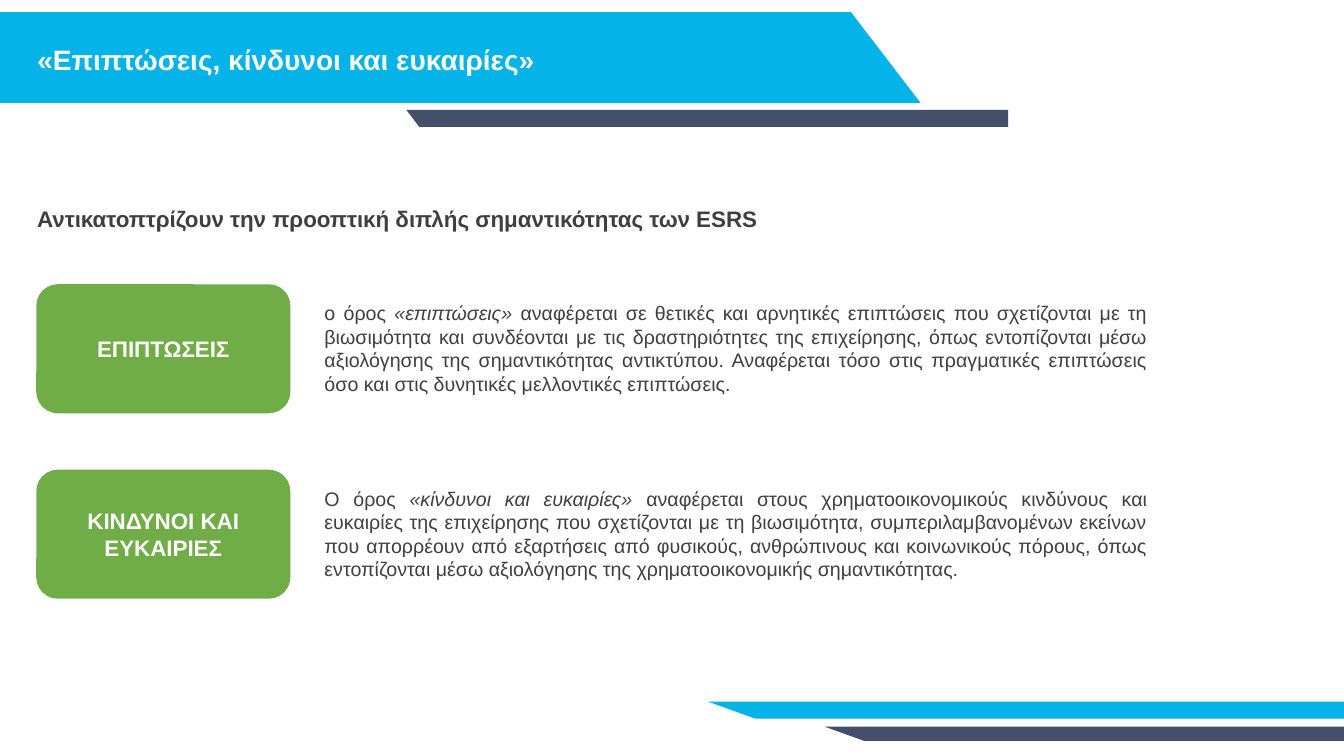
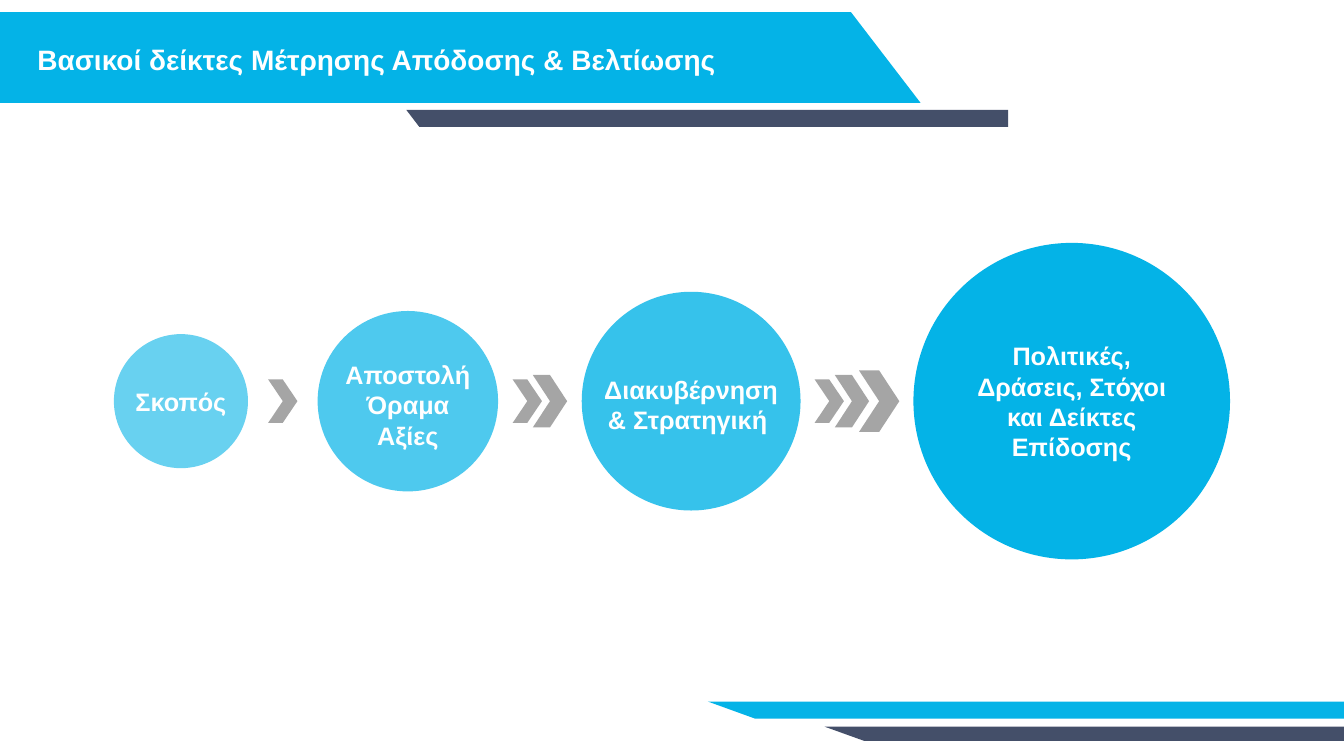
from dataclasses import dataclass
from pptx import Presentation
from pptx.dml.color import RGBColor
from pptx.enum.shapes import MSO_SHAPE
from pptx.enum.text import MSO_ANCHOR, PP_ALIGN
from pptx.oxml.ns import qn
from pptx.util import Inches, Pt
from lxml.etree import SubElement


@dataclass(frozen=True)
class Theme:
    font: str = "Arial"
    blue: str = "04B3E7"
    navy: str = "444F69"
    green: str = "70AD47"
    grey: str = "808080"
    ink: str = "3F3F3F"
    white: str = "FFFFFF"
    title: int = 20
    stage: int = 18
    label: int = 16
    body: int = 14


T = Theme()
W, H = 13.33, 7.5
TITLE_BOX = (0.27, 0.23, 7.85, 0.72)
INSETS = (0.1, 0.05, 0.1, 0.05)

# Outlines of the shared bands: colour and corner points
BANDS = [
    (T.blue, [(0, 0.12), (8.44, 0.12), (9.13, 1.02), (0, 1.02)]),
    (T.navy, [(4.03, 1.09), (10, 1.09), (10, 1.26), (4.16, 1.26)]),
    (T.blue, [(7.02, 6.96), (W, 6.96), (W, 7.13), (7.49, 7.13)]),
    (T.navy, [(8.18, 7.21), (W, 7.21), (W, 7.35), (8.57, 7.35)]),
]

# Each term: label, then runs of (text, italic)
TERMS = [
    ("ΕΠΙΠΤΩΣΕΙΣ", [
        ("ο όρος ", False), ("«επιπτώσεις» ", True),
        ("αναφέρεται σε θετικές και αρνητικές επιπτώσεις που σχετίζονται με τη "
         "βιωσιμότητα και συνδέονται με τις δραστηριότητες της επιχείρησης, όπως "
         "εντοπίζονται μέσω αξιολόγησης της σημαντικότητας αντικτύπου. Αναφέρεται "
         "τόσο στις πραγματικές επιπτώσεις όσο και στις δυνητικές μελλοντικές "
         "επιπτώσεις.", False)]),
    ("ΚΙΝΔΥΝΟΙ ΚΑΙ ΕΥΚΑΙΡΙΕΣ", [
        ("Ο όρος ", False), ("«κίνδυνοι και ευκαιρίες» ", True),
        ("αναφέρεται στους χρηματοοικονομικούς κινδύνους και ευκαιρίες της "
         "επιχείρησης που σχετίζονται με τη βιωσιμότητα, συμπεριλαμβανομένων "
         "εκείνων που απορρέουν από εξαρτήσεις από φυσικούς, ανθρώπινους και "
         "κοινωνικούς πόρους, όπως εντοπίζονται μέσω αξιολόγησης της "
         "χρηματοοικονομικής σημαντικότητας.", False)]),
]

# Each stage: left offset, diameter, opacity %, top inset, wrap, paragraphs
STAGES = [
    (0, 1.33, 60, 0.05, True, ["Σκοπός"]),
    (2.02, 1.79, 70, 0.12, True, ["Αποστολή Όραμα", "Αξίες"]),
    (4.64, 2.17, 80, 0.12, False, ["Διακυβέρνηση", "& Στρατηγική "]),
    (7.93, 3.14, 100, 0.05, True, ["Πολιτικές, Δράσεις, Στόχοι και Δείκτες Επίδοσης"]),
]
# Each chevron: offset in its group, width, height
CHEVRONS = [(0, 0.29, 0.43), (0.2, 0.34, 0.52), (0.44, 0.4, 0.61)]


def place(sp, box):
    for name, value in zip(("left", "top", "width", "height"), box):
        setattr(sp, name, Inches(value))


def paint(sp, color, opacity=100):
    sp.shadow.inherit = False
    sp.fill.solid()
    sp.fill.fore_color.rgb = RGBColor.from_string(color)
    sp.line.fill.background()
    if opacity < 100:
        rgb = sp.element.spPr.find(qn("a:solidFill"))[0]
        SubElement(rgb, qn("a:alpha")).set("val", str(opacity * 1000))


def write(sp, paragraphs, size, color, bold=True, align=PP_ALIGN.LEFT,
          anchor=MSO_ANCHOR.MIDDLE, insets=INSETS, wrap=True, indent=0):
    """Fill a shape with paragraphs, each a list of (text, italic) runs."""
    tf = sp.text_frame
    frame = dict(zip(("margin_left", "margin_top", "margin_right", "margin_bottom"),
                     map(Inches, insets)), vertical_anchor=anchor, word_wrap=wrap)
    for name, value in frame.items():
        setattr(tf, name, value)
    for i, runs in enumerate(paragraphs):
        p = tf.add_paragraph() if i else tf.paragraphs[0]
        p.alignment = align
        if indent:
            p._p.get_or_add_pPr().set("marL", str(Inches(indent)))
        for text, italic in runs:
            r = p.add_run()
            r.text = text
            fmt = {"name": T.font, "size": Pt(size), "bold": bold, "italic": italic}
            for name, value in fmt.items():
                setattr(r.font, name, value)
            r.font.color.rgb = RGBColor.from_string(color)


def add_shape(s, kind, box, color, opacity=100):
    sp = s.shapes.add_shape(kind, *map(Inches, box))
    paint(sp, color, opacity)
    return sp


def add_text(s, box, runs, size, **style):
    sp = s.shapes.add_textbox(*map(Inches, box))
    write(sp, [runs], size, T.ink, **style)


def add_slide(prs, title):
    s = prs.slides.add_slide(prs.slide_layouts[5])
    write(s.shapes.title, [[(title, False)]], T.title, T.white)
    return s


def set_master(prs, s):
    """Draw the bands with slide s and move them behind the master's placeholders."""
    tree = prs.slide_master.shapes.element
    for i, (color, points) in enumerate(BANDS):
        corners = [(Inches(x), Inches(y)) for x, y in points]
        builder = s.shapes.build_freeform(*corners[0])
        builder.add_line_segments(corners[1:], close=True)
        sp = builder.convert_to_shape()
        paint(sp, color)
        tree.insert(2 + i, sp.element)


def term_row(s, box, label, runs):
    """A green label on the left and its definition on the right."""
    x, y, w, h = box
    label_w, gap, pad = 2.52, 0.16, 0.12
    sp = add_shape(s, MSO_SHAPE.ROUNDED_RECTANGLE, (x, y, label_w, h), T.green)
    write(sp, [[(label, False)]], T.label, T.white, align=PP_ALIGN.CENTER)
    text_x = label_w + gap
    add_text(s, (x + text_x, y + pad, w - text_x, h - 2 * pad), runs, T.body,
             bold=False, align=PP_ALIGN.JUSTIFY, anchor=MSO_ANCHOR.TOP, indent=0.08)


def terms_region(s, box):
    x, y, w, h = box
    row_h = 1.28
    pitch = (h - row_h) / (len(TERMS) - 1)
    for i, (label, runs) in enumerate(TERMS):
        term_row(s, (x, y + i * pitch, w, row_h), label, runs)


def chevron_group(s, left, right, mid, count):
    """Chevrons of growing size, centred between two circles."""
    group = CHEVRONS[:count]
    start = (left + right - group[-1][0] - group[-1][1]) / 2
    for dx, w, h in group:
        add_shape(s, MSO_SHAPE.CHEVRON, (start + dx, mid - h / 2, w, h), T.grey, 70)


def stages_region(s, box):
    x, y, w, h = box
    mid = y + h / 2
    for dx, d, opacity, top, wrap, lines in STAGES:
        sp = add_shape(s, MSO_SHAPE.OVAL, (x + dx, mid - d / 2, d, d), T.blue, opacity)
        write(sp, [[(line, False)] for line in lines], T.stage, T.white,
              align=PP_ALIGN.CENTER, insets=(0, top, 0, 0.05), wrap=wrap)
    for i, (a, b) in enumerate(zip(STAGES, STAGES[1:]), 1):
        chevron_group(s, x + a[0] + a[1], x + b[0], mid, i)


def terms_slide(prs):
    s = add_slide(prs, "«Επιπτώσεις, κίνδυνοι και ευκαιρίες»")
    add_text(s, (0.27, 1.99, 8.34, 0.37),
             [("Αντικατοπτρίζουν την προοπτική διπλής σημαντικότητας των ESRS", False)],
             T.label, anchor=MSO_ANCHOR.TOP)
    terms_region(s, (0.36, 2.82, 11.12, 3.12))
    return s


def stages_slide(prs):
    s = add_slide(prs, "Βασικοί δείκτες Μέτρησης Απόδοσης & Βελτίωσης")
    stages_region(s, (1.13, 2.41, 11.07, 3.14))


def main():
    prs = Presentation()
    prs.slide_width, prs.slide_height = Inches(W), Inches(H)
    place(prs.slide_layouts[5].placeholders[0], TITLE_BOX)
    set_master(prs, terms_slide(prs))
    stages_slide(prs)
    prs.save("out.pptx")


if __name__ == "__main__":
    main()
